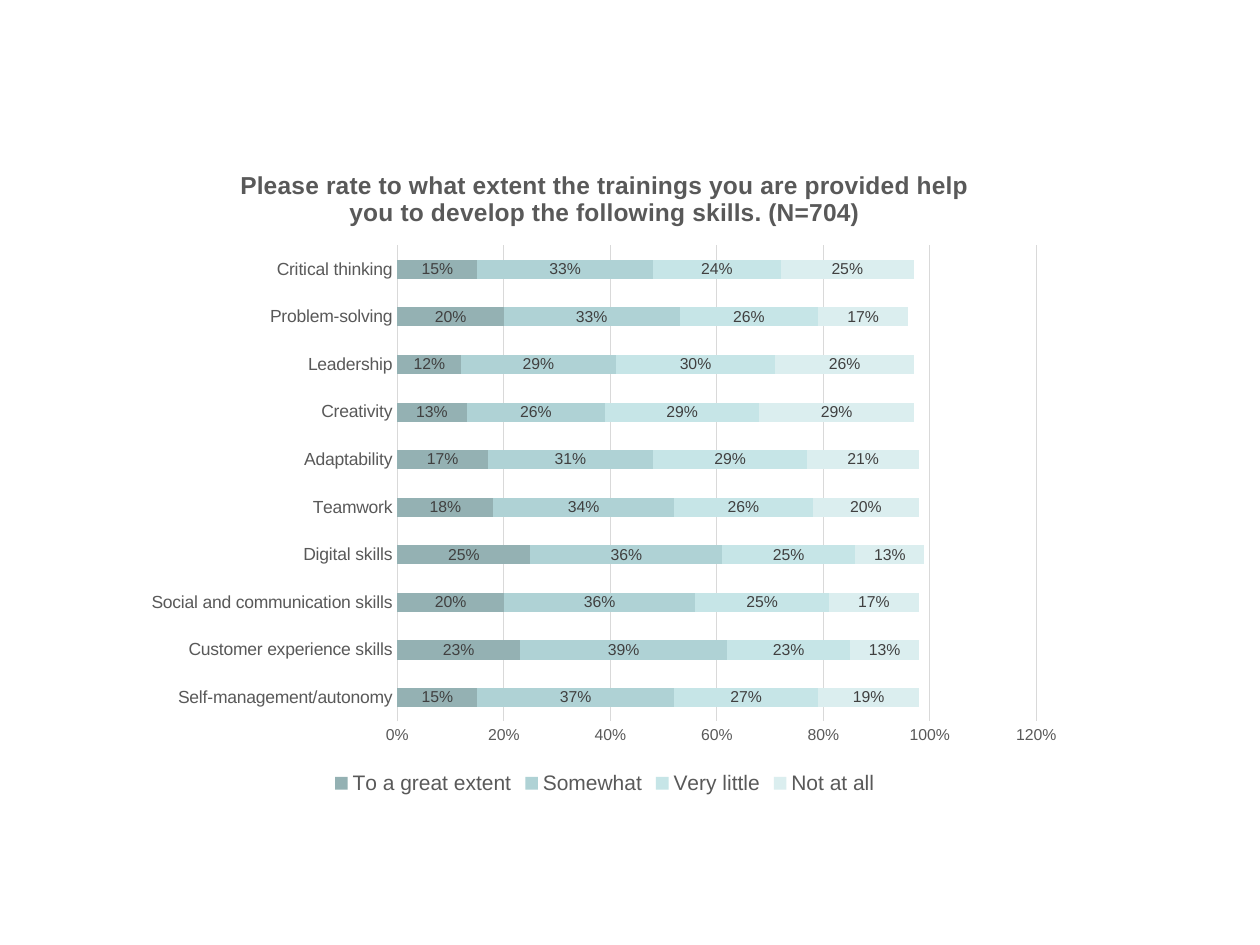
import pptx
import pptx.chart.data
import pptx.dml.color
import pptx.enum.chart
import pptx.oxml
import pptx.oxml.ns
import pptx.util

COLORS = {
    "text": "595959",
    "label": "404040",
    "grid": "D9D9D9",
    "To a great extent": "94B1B3",
    "Somewhat": "AFD2D5",
    "Very little": "C6E5E7",
    "Not at all": "DBEEEF",
}
TITLE = ("Please rate to what extent the trainings you are provided help "
         "you to develop the following skills. (N=704)")
ANSWERS = ["To a great extent", "Somewhat", "Very little", "Not at all"]
SKILLS = {
    "Self-management/autonomy": (0.15, 0.37, 0.27, 0.19),
    "Customer experience skills": (0.23, 0.39, 0.23, 0.13),
    "Social and communication skills": (0.20, 0.36, 0.25, 0.17),
    "Digital skills": (0.25, 0.36, 0.25, 0.13),
    "Teamwork": (0.18, 0.34, 0.26, 0.20),
    "Adaptability": (0.17, 0.31, 0.29, 0.21),
    "Creativity": (0.13, 0.26, 0.29, 0.29),
    "Leadership": (0.12, 0.29, 0.30, 0.26),
    "Problem-solving": (0.20, 0.33, 0.26, 0.17),
    "Critical thinking": (0.15, 0.33, 0.24, 0.25),
}


def set_all(target, **values):
    for name, value in values.items():
        setattr(target, name, value)


class SurveySlide:
    FONT = "Arial"

    def __init__(self, presentation):
        self.width = presentation.slide_width
        self.height = presentation.slide_height
        self.slide = presentation.slides.add_slide(presentation.slide_layouts[6])

    def color(self, name):
        return pptx.dml.color.RGBColor.from_string(COLORS[name])

    def format_font(self, font, size, color="text", bold=False):
        set_all(font, name=self.FONT, size=pptx.util.Pt(size), bold=bold)
        font.color.rgb = self.color(color)

    def format_line(self, line):
        line.color.rgb = self.color("grid")
        line.width = pptx.util.Pt(0.75)

    def add_stacked_bars(self, answers, skills, left, top, width, height):
        """Add the chart; lengths are shares of the slide's size."""
        data = pptx.chart.data.CategoryChartData(number_format="0%")
        data.categories = list(skills)
        for answer, values in zip(answers, zip(*skills.values())):
            data.add_series(answer, values)
        chart = self.slide.shapes.add_chart(
            pptx.enum.chart.XL_CHART_TYPE.BAR_STACKED,
            int(left * self.width), int(top * self.height),
            int(width * self.width), int(height * self.height), data).chart
        self.format_font(chart.font, 10)
        plot = chart.plots[0]
        set_all(plot, gap_width=150, overlap=100, vary_by_categories=False)
        for series in plot.series:
            series.format.fill.solid()
            series.format.fill.fore_color.rgb = self.color(series.name)
            labels = series.data_labels
            set_all(labels, show_value=True, number_format="0%",
                    number_format_is_linked=False,
                    position=pptx.enum.chart.XL_LABEL_POSITION.CENTER)
            self.format_font(labels.font, 9, "label")
        return chart

    def format_axes(self, chart):
        no_tick = pptx.enum.chart.XL_TICK_MARK.NONE
        for axis, size in ((chart.category_axis, 10), (chart.value_axis, 9)):
            set_all(axis, major_tick_mark=no_tick, minor_tick_mark=no_tick)
            self.format_font(axis.tick_labels.font, size)
        chart.category_axis.has_major_gridlines = False
        self.format_line(chart.category_axis.format.line)
        values = chart.value_axis
        set_all(values, minimum_scale=0, maximum_scale=1.2, major_unit=0.2,
                has_major_gridlines=True)
        set_all(values.tick_labels, number_format="0%",
                number_format_is_linked=False)
        values.format.line.fill.background()
        self.format_line(values.major_gridlines.format.line)

    def add_chart_title(self, chart, text, size):
        chart.has_title = True
        paragraph = chart.chart_title.text_frame.paragraphs[0]
        run = paragraph.add_run()
        run.text = text
        self.format_font(run.font, size, bold=True)

    def add_legend(self, chart, size):
        chart.has_legend = True
        set_all(chart.legend, include_in_layout=False,
                position=pptx.enum.chart.XL_LEGEND_POSITION.BOTTOM)
        self.format_font(chart.legend.font, size)

    def place_plot(self, chart, **shares):
        """Fix the inner plot area by x, y, w and h as shares of the chart."""
        qn = pptx.oxml.ns.qn
        area = chart.plots[0]._element.getparent()
        for layout in area.findall(qn("c:layout")):
            area.remove(layout)
        places = "".join(f'<c:{name} val="{share}"/>' for name, share in shares.items())
        area.insert(0, pptx.oxml.parse_xml(
            f'<c:layout {pptx.oxml.ns.nsdecls("c")}><c:manualLayout>'
            '<c:layoutTarget val="inner"/><c:xMode val="edge"/><c:yMode val="edge"/>'
            f'{places}</c:manualLayout></c:layout>'))


def main():
    presentation = pptx.Presentation()
    set_all(presentation, slide_width=pptx.util.Inches(10),
            slide_height=pptx.util.Inches(7.5))
    survey = SurveySlide(presentation)
    chart = survey.add_stacked_bars(ANSWERS, SKILLS, left=0.106, top=0.153,
                                    width=0.748, height=0.693)
    survey.format_axes(chart)
    survey.add_chart_title(chart, TITLE, 14)
    survey.add_legend(chart, 12)
    survey.place_plot(chart, x=0.28, y=0.154, w=0.678, h=0.727)
    presentation.save("out.pptx")


if __name__ == "__main__":
    main()
